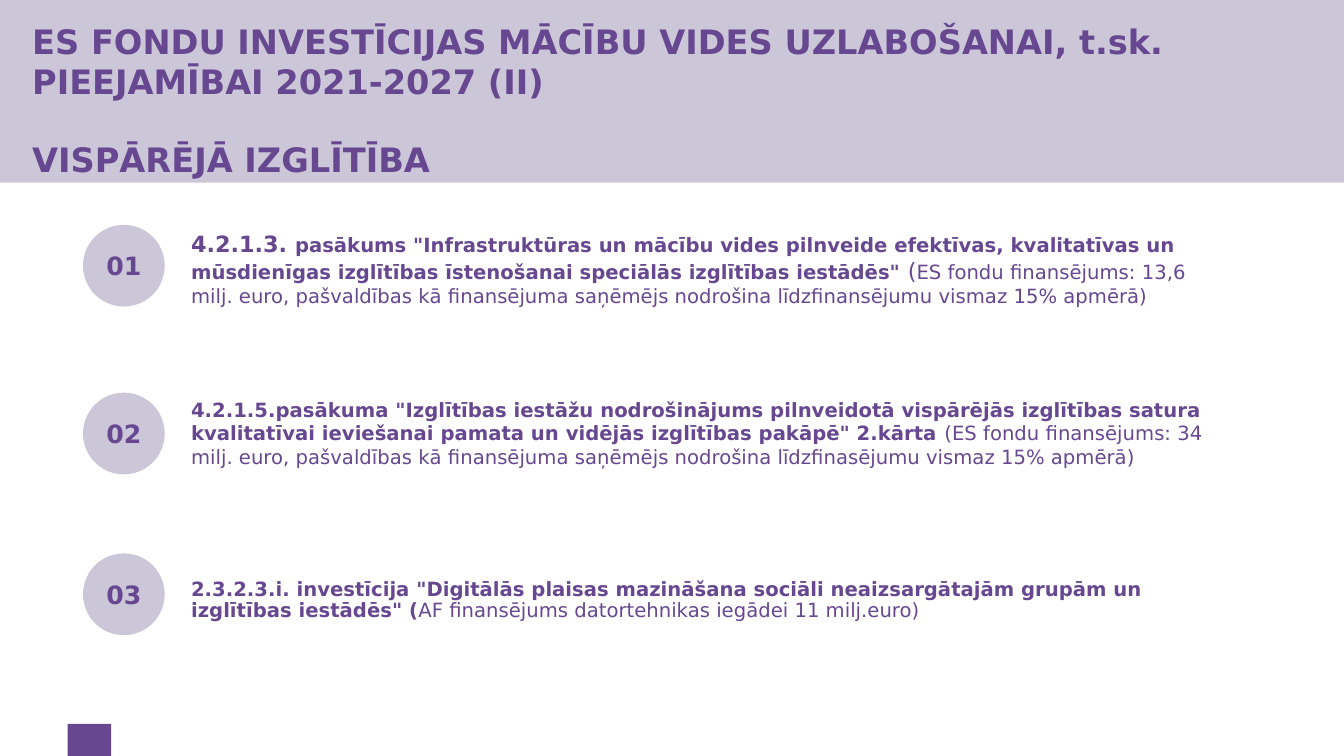
from dataclasses import dataclass

from pptx import Presentation
from pptx.dml.color import RGBColor
from pptx.enum import shapes, text
from pptx.util import Pt


@dataclass(frozen=True)
class Theme:
    font: str = "DejaVu Sans"
    ink: RGBColor = RGBColor(0x66, 0x47, 0x90)
    pale: RGBColor = RGBColor(0xCB, 0xC7, 0xD8)
    title_size: int = 24
    badge_size: int = 18
    lead_size: int = 16
    body_size: int = 14


THEME = Theme()
TITLE = (
    "ES FONDU INVESTĪCIJAS MĀCĪBU VIDES UZLABOŠANAI, t.sk. PIEEJAMĪBAI 2021-2027 (II)",
    "VISPĀRĒJĀ IZGLĪTĪBA",
)
BADGE_LEFT, BADGE_SIDE = 59.3, 58.4
ITEM_LEFT, ITEM_WIDTH = 129.4, 755
LEAD, BODY = THEME.lead_size, THEME.body_size
ITEMS = [
    (160.6, 65.5, text.MSO_ANCHOR.TOP, 1, [
        ("4.2.1.3. ", LEAD, True),
        ('pasākums "Infrastruktūras un mācību vides pilnveide efektīvas, kvalitatīvas un '
         'mūsdienīgas izglītības īstenošanai speciālās izglītības iestādēs" ', BODY, True),
        ("(", LEAD, False),
        ("ES fondu finansējums: 13,6 milj. euro, pašvaldības kā finansējuma saņēmējs "
         "nodrošina līdzfinansējumu vismaz 15% apmērā)", BODY, False),
    ]),
    (280.5, 58.3, text.MSO_ANCHOR.TOP, 1, [
        ('4.2.1.5.pasākuma "Izglītības iestāžu nodrošinājums pilnveidotā vispārējās '
         "izglītības satura kvalitatīvai ieviešanai pamata un vidējās izglītības "
         'pakāpē" 2.kārta ', BODY, True),
        ("(ES fondu finansējums: 34 milj. euro, pašvaldības kā finansējuma saņēmējs "
         "nodrošina līdzfinasējumu vismaz 15% apmērā)", BODY, False),
    ]),
    (395.3, 67, text.MSO_ANCHOR.MIDDLE, 0.9, [
        ('2.3.2.3.i. investīcija "Digitālās plaisas mazināšana sociāli neaizsargātajām '
         'grupām un izglītības iestādēs" (', BODY, True),
        ("AF finansējums datortehnikas iegādei 11 milj.euro)", BODY, False),
    ]),
]


def style_span(span, size, bold):
    span.font.name = THEME.font
    span.font.size = Pt(size)
    span.font.bold = bold
    span.font.color.rgb = THEME.ink


def add_filled(page, kind, left, top, width, height, color):
    shape = page.shapes.add_shape(kind, Pt(left), Pt(top), Pt(width), Pt(height))
    shape.shadow.inherit = False
    shape.fill.solid()
    shape.fill.fore_color.rgb = color
    shape.line.fill.background()
    return shape


def set_title(page):
    title = page.shapes.title
    title.left, title.top, title.width, title.height = Pt(23), Pt(15.8), Pt(921.6), Pt(111.6)
    frame = title.text_frame
    frame.text = "\n".join(TITLE)
    frame.word_wrap = True
    frame.auto_size = text.MSO_AUTO_SIZE.NONE
    frame.vertical_anchor = text.MSO_ANCHOR.MIDDLE
    frame.margin_left = 0
    for para in frame.paragraphs:
        para.alignment = text.PP_ALIGN.LEFT
        style_span(para.runs[0], THEME.title_size, True)
    frame.paragraphs[-1].space_before = Pt(27)
    return title


def add_badge(page, number, top):
    badge = add_filled(page, shapes.MSO_SHAPE.OVAL, BADGE_LEFT, top,
                       BADGE_SIDE, BADGE_SIDE, THEME.pale)
    frame = badge.text_frame
    frame.text = f"{number:02d}"
    frame.margin_left = frame.margin_right = 0
    frame.vertical_anchor = text.MSO_ANCHOR.MIDDLE
    para = frame.paragraphs[0]
    para.alignment = text.PP_ALIGN.CENTER
    style_span(para.runs[0], THEME.badge_size, True)


def add_item(page, top, height, anchor, spacing, spans):
    box = page.shapes.add_textbox(Pt(ITEM_LEFT), Pt(top), Pt(ITEM_WIDTH), Pt(height))
    frame = box.text_frame
    frame.word_wrap = True
    frame.vertical_anchor = anchor
    para = frame.paragraphs[0]
    para.line_spacing = spacing
    for wording, size, bold in spans:
        span = para.add_run()
        span.text = wording
        style_span(span, size, bold)


def main():
    deck = Presentation()
    deck.slide_width, deck.slide_height = Pt(960), Pt(540)
    page = deck.slides.add_slide(deck.slide_layouts[5])
    title = set_title(page)
    band = add_filled(page, shapes.MSO_SHAPE.RECTANGLE, 0, 0, 960, 130.5, THEME.pale)
    title.element.addprevious(band.element)
    add_filled(page, shapes.MSO_SHAPE.RECTANGLE, 48.4, 517, 31, 23, THEME.ink)
    for number, item in enumerate(ITEMS, 1):
        add_badge(page, number, item[0])
        add_item(page, *item)
    deck.save("out.pptx")


if __name__ == "__main__":
    main()
